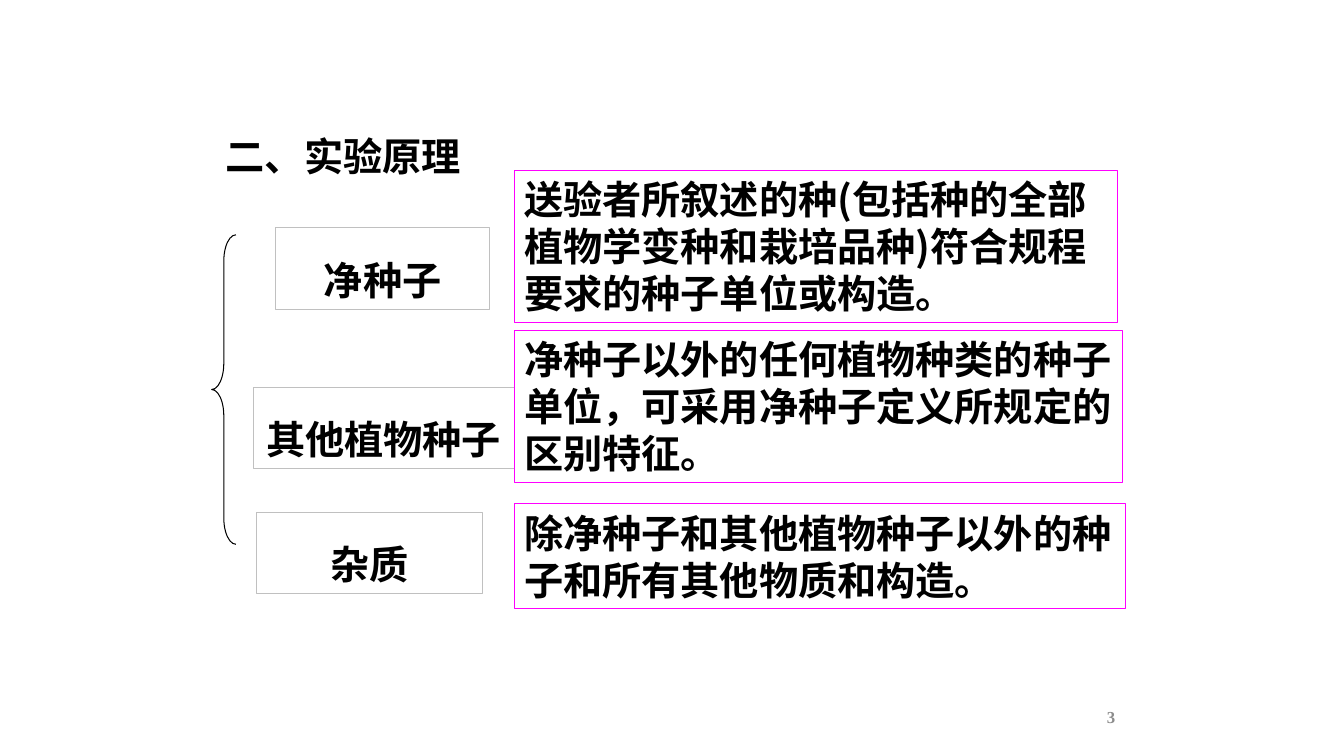
from lxml.etree import SubElement
from pptx import Presentation
from pptx.dml.color import RGBColor
from pptx.enum.shapes import MSO_SHAPE
from pptx.enum.text import MSO_ANCHOR, MSO_AUTO_SIZE, PP_ALIGN
from pptx.oxml.ns import qn
from pptx.util import Inches, Pt

TITLE = "二、实验原理"
PAGE_NUMBER = "3"
TERMS = [
    ("净种子", (2.73, 2.26, 2.13),
     "送验者所叙述的种(包括种的全部植物学变种和栽培品种)符合规程要求的种子单位或构造。",
     (1.69, 5.98, 1.51)),
    ("其他植物种子", (2.51, 3.84, 2.59),
     "净种子以外的任何植物种类的种子单位，可采用净种子定义所规定的区别特征。",
     (3.28, 6.03, 1.51)),
    ("杂质", (2.54, 5.08, 2.25),
     "除净种子和其他植物种子以外的种子和所有其他物质和构造。",
     (5, 6.06, 1.04)),
]
COLORS = {"text": "000000", "label": "C0C0C0", "definition": "FF00FF", "number": "8C8C8C"}
CJK_FONT = "Noto Sans CJK SC"
NUMBER_FONT = "Times New Roman"
LABEL_HEIGHT = 0.81
DEFINITION_LEFT = 5.1


def color(name):
    return RGBColor.from_string(COLORS[name])


def write(shape, text, align=PP_ALIGN.LEFT, spacing=1.0, size=28,
          font_name=CJK_FONT, color_name="text", anchor=MSO_ANCHOR.TOP):
    frame = shape.text_frame
    frame.text = text
    frame.word_wrap = True
    frame.vertical_anchor = anchor
    paragraph = frame.paragraphs[0]
    paragraph.alignment = align
    paragraph.line_spacing = spacing
    paragraph.space_before = Pt(0)
    font = paragraph.font
    font.name = font_name
    font.size = Pt(size)
    font.bold = True
    font.color.rgb = color(color_name)
    properties = paragraph.runs[0].font
    properties.name = font_name
    SubElement(properties._element, qn("a:ea"), typeface=font_name)
    return frame


def add_outline(slide, kind, box, line_color):
    shape = slide.shapes.add_shape(kind, *map(Inches, box))
    shape.shadow.inherit = False
    shape.fill.background()
    shape.line.color.rgb = color(line_color)
    shape.line.width = Pt(0.75)
    return shape


def add_box(slide, text, box, line_color, **style):
    shape = add_outline(slide, MSO_SHAPE.RECTANGLE, box, line_color)
    write(shape, text, **style).auto_size = MSO_AUTO_SIZE.SHAPE_TO_FIT_TEXT


def main():
    presentation = Presentation()
    presentation.slide_width = Inches(13.33)
    presentation.slide_height = Inches(7.5)
    slide = presentation.slides.add_slide(presentation.slide_layouts[5])

    title = slide.shapes.title
    title.left, title.top, title.width, title.height = map(Inches, (2.11, 1.07, 9.04, 0.79))
    frame = write(title, TITLE, spacing=1.4)
    frame.auto_size = MSO_AUTO_SIZE.SHAPE_TO_FIT_TEXT
    frame.margin_left = frame.margin_right = Inches(0.13)
    frame.margin_top = frame.margin_bottom = Inches(0.06)

    for label, (left, top, width), definition, (box_top, box_width, box_height) in TERMS:
        add_box(slide, label, (left, top, width, LABEL_HEIGHT), "label",
                align=PP_ALIGN.CENTER, spacing=1.5)
        add_box(slide, definition, (DEFINITION_LEFT, box_top, box_width, box_height),
                "definition")

    brace = add_outline(slide, MSO_SHAPE.LEFT_BRACE, (2.1, 2.33, 0.24, 3.07), "text")
    brace.adjustments[0] = 1.085

    number = slide.shapes.add_textbox(*map(Inches, (8.83, 6.95, 2.33, 0.4)))
    write(number, PAGE_NUMBER, align=PP_ALIGN.RIGHT, spacing=0.5, size=12,
          font_name=NUMBER_FONT, color_name="number", anchor=MSO_ANCHOR.MIDDLE)

    presentation.save("out.pptx")


if __name__ == "__main__":
    main()
